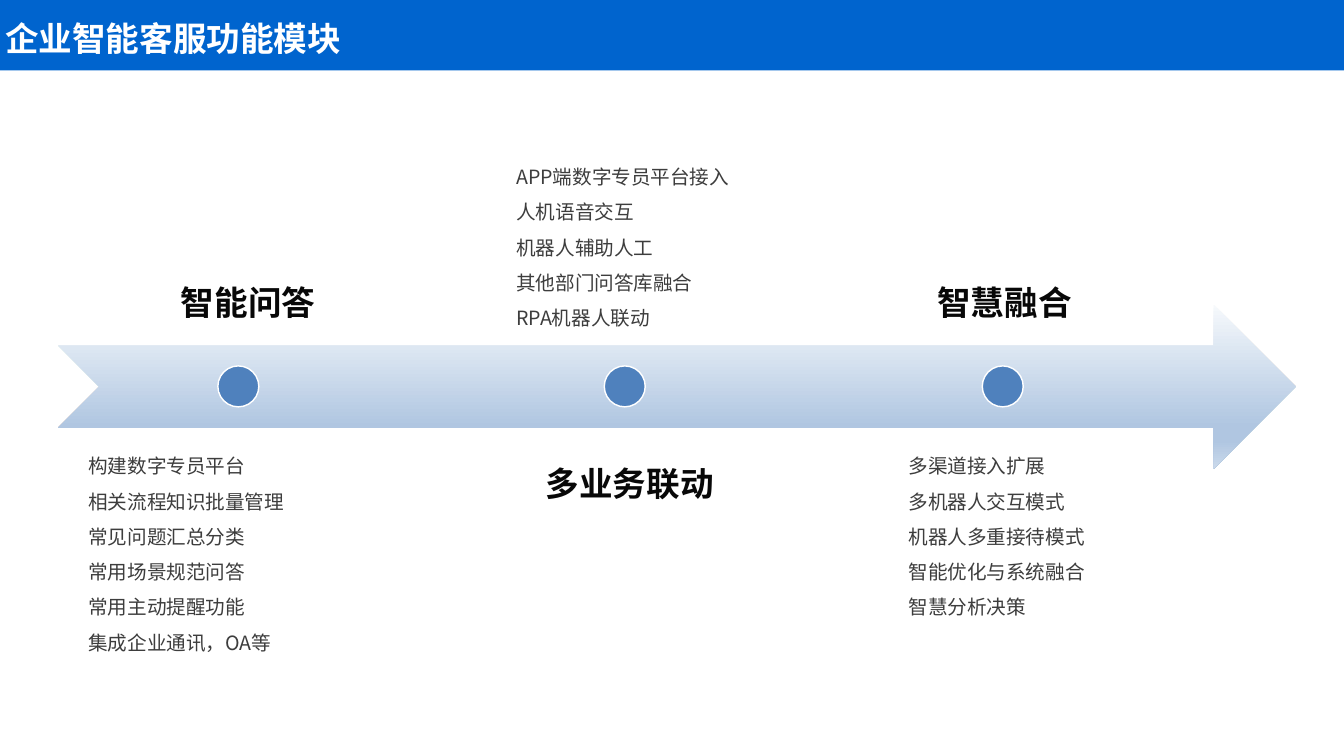
"""Build the slide on the function modules of smart customer service."""
from dataclasses import dataclass
from typing import Any, NamedTuple

from lxml.etree import SubElement
from pptx import Presentation
from pptx.dml.color import RGBColor
from pptx.enum.shapes import MSO_SHAPE
from pptx.enum.text import MSO_ANCHOR, MSO_AUTO_SIZE, PP_ALIGN
from pptx.oxml.ns import qn
from pptx.util import Emu, Pt

EMU_PER_PX = 9525


@dataclass(frozen=True)
class Theme:
    """Colours, font and type sizes of the slide."""

    font: str = "Noto Sans CJK SC"
    white: str = "FFFFFF"
    header: str = "0064CE"
    dot: str = "4F81BD"
    heading: str = "080808"
    body: str = "3D3D3D"
    arrow: tuple = ((0, "F6F9FC"), (74, "B0C6E1"), (83, "B0C6E1"), (100, "CAD9EB"))
    large: int = 48
    small: int = 28
    outline: int = 2


class Box(NamedTuple):
    """A frame in px."""

    left: int
    top: int
    width: int
    height: int


@dataclass(frozen=True)
class Stage:
    """One stop on the arrow with its heading and its functions."""

    dot_left: int
    heading: str
    heading_box: Box
    heading_align: PP_ALIGN
    functions: tuple[str, ...]
    functions_box: Box


THEME = Theme()
PAGE = Box(0, 0, 2560, 1440)
HEADER = Box(0, 0, 2560, 134)
TITLE = Box(0, 33, 2560, 79)
ARROW = Box(111, 580, 2357, 313)
DOT_TOP, DOT_SIZE = 697, 78
STAGES = (
    Stage(
        415, "智能问答", Box(297, 532, 313, 87), PP_ALIGN.RIGHT,
        ("构建数字专员平台", "相关流程知识批量管理", "常见问题汇总分类",
         "常用场景规范问答", "常用主动提醒功能", "集成企业通讯，OA等"),
        Box(159, 838, 837, 417),
    ),
    Stage(
        1151, "多业务联动", Box(890, 877, 479, 87), PP_ALIGN.RIGHT,
        ("APP端数字专员平台接入", "人机语音交互", "机器人辅助人工",
         "其他部门问答库融合", "RPA机器人联动"),
        Box(974, 287, 892, 348),
    ),
    Stage(
        1871, "智慧融合", Box(1726, 532, 375, 87), PP_ALIGN.CENTER,
        ("多渠道接入扩展", "多机器人交互模式", "机器人多重接待模式",
         "智能优化与系统融合", "智慧分析决策"),
        Box(1721, 838, 739, 348),
    ),
)


def px(length: int) -> Emu:
    """Turn px into EMU."""
    return Emu(length * EMU_PER_PX)


def set_format(target: Any, values: dict[str, Any]) -> None:
    """Set every named attribute on the target."""
    for name, value in values.items():
        setattr(target, name, value)


def place(box: Box) -> list[Emu]:
    """Give the frame in EMU."""
    return [px(length) for length in box]


def write(shape: Any, lines: tuple[str, ...], size: int, colour: str, bold: bool,
          align: PP_ALIGN, spacing: float, anchor: MSO_ANCHOR) -> None:
    """Fill a text shape with one paragraph per line."""
    frame = shape.text_frame
    set_format(frame, {"word_wrap": True, "auto_size": MSO_AUTO_SIZE.NONE,
                       "vertical_anchor": anchor})
    for index, line in enumerate(lines):
        para = frame.add_paragraph() if index else frame.paragraphs[0]
        set_format(para, {"alignment": align, "line_spacing": spacing})
        span = para.add_run()
        span.text = line
        set_format(span.font, {"size": Pt(size), "bold": bold, "name": THEME.font})
        span.font.color.rgb = RGBColor.from_string(colour)
        SubElement(span.font._element, qn("a:ea"), typeface=THEME.font)


def add_text(page: Any, box: Box, lines: tuple[str, ...], size: int, colour: str,
             bold: bool, align: PP_ALIGN, spacing: float) -> None:
    """Add a text box anchored at its top."""
    shape = page.shapes.add_textbox(*place(box))
    write(shape, lines, size, colour, bold, align, spacing, MSO_ANCHOR.TOP)


def add_shape(page: Any, kind: MSO_SHAPE, box: Box, fill: str) -> Any:
    """Add a plain shape with neither shadow nor line."""
    shape = page.shapes.add_shape(kind, *place(box))
    shape.shadow.inherit = False
    shape.fill.solid()
    shape.fill.fore_color.rgb = RGBColor.from_string(fill)
    shape.line.fill.background()
    return shape


def add_arrow(page: Any) -> None:
    """Add the notched arrow with its downward gradient."""
    arrow = add_shape(page, MSO_SHAPE.NOTCHED_RIGHT_ARROW, ARROW, THEME.white)
    arrow.fill.gradient()
    arrow.fill.gradient_angle = 270
    stops = arrow.element.spPr.find(qn("a:gradFill")).find(qn("a:gsLst"))
    for stop in list(stops):
        stops.remove(stop)
    for percent, colour in THEME.arrow:
        stop = SubElement(stops, qn("a:gs"), pos=str(percent * 1000))
        SubElement(stop, qn("a:srgbClr"), val=colour)


def add_title(page: Any, text: str) -> None:
    """Put the title on its header band."""
    title = page.shapes.title
    band = add_shape(page, MSO_SHAPE.RECTANGLE, HEADER, THEME.header)
    title.element.addprevious(band.element)
    set_format(title, dict(zip(("left", "top", "width", "height"), place(TITLE))))
    write(title, (text,), THEME.large, THEME.white, True, PP_ALIGN.LEFT, 1.0,
          MSO_ANCHOR.MIDDLE)


def add_stage(page: Any, stage: Stage) -> None:
    """Add a dot on the arrow with its heading and functions."""
    dot = add_shape(page, MSO_SHAPE.OVAL,
                    Box(stage.dot_left, DOT_TOP, DOT_SIZE, DOT_SIZE), THEME.dot)
    dot.line.color.rgb = RGBColor.from_string(THEME.white)
    dot.line.width = Pt(THEME.outline)
    add_text(page, stage.heading_box, (stage.heading,), THEME.large, THEME.heading,
             True, stage.heading_align, 1.0)
    add_text(page, stage.functions_box, stage.functions, THEME.small, THEME.body,
             False, PP_ALIGN.LEFT, 1.5)


def main() -> None:
    """Build and save the deck."""
    deck = Presentation()
    set_format(deck, {"slide_width": px(PAGE.width), "slide_height": px(PAGE.height)})
    page = deck.slides.add_slide(deck.slide_layouts[5])
    add_title(page, "企业智能客服功能模块")
    add_arrow(page)
    for stage in STAGES:
        add_stage(page, stage)
    deck.save("out.pptx")


if __name__ == "__main__":
    main()
